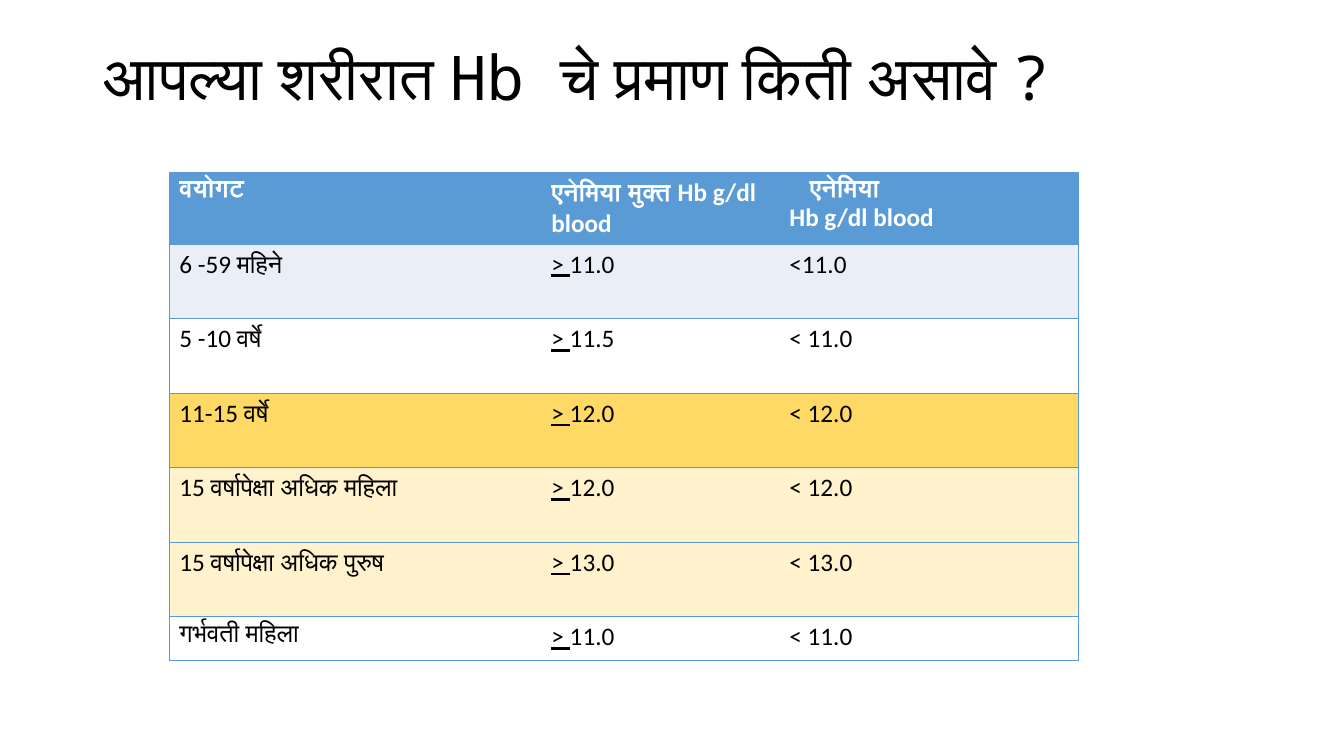
import pptx
import pptx.dml.color
import pptx.enum.text
import pptx.oxml
import pptx.oxml.ns
import pptx.util
from pptx.util import Inches

TITLE = "आपल्या शरीरात Hb चे प्रमाण किती असावे ?"
HEADINGS = ["वयोगट", "एनेमिया मुक्त Hb g/dl blood", "एनेमिया\nHb g/dl blood"]
AGE_GROUPS = [  # age group, anaemia-free level, anaemia level, row colour
    ("6 -59 महिने", "11.0", "<11.0", "pale_blue"),
    ("5 -10 वर्षे", "11.5", "< 11.0", "white"),
    ("11-15 वर्षे", "12.0", "< 12.0", "gold"),
    ("15 वर्षापेक्षा अधिक महिला", "12.0", "< 12.0", "cream"),
    ("15 वर्षापेक्षा अधिक पुरुष", "13.0", "< 13.0", "cream"),
    ("गर्भवती महिला", "11.0", "< 11.0", "white"),
]
COLORS = {
    "blue": "5B9BD5", "pale_blue": "EAEFF7", "white": "FFFFFF",
    "gold": "FFD966", "cream": "FFF2CC", "black": "000000",
}
COLUMN_WIDTHS = [3.69, 2.36, 2.97]
ROW_HEIGHTS = [0.58] + [0.74] * 5 + [0.43]
TITLE_FORMAT = {"name": "Noto Sans Mono", "size": pptx.util.Pt(44), "bold": False}
HEADING_FORMAT = {"name": "Calibri", "size": pptx.util.Pt(18), "bold": True}
BODY_FORMAT = HEADING_FORMAT | {"bold": False}


def rgb(color):
    return pptx.dml.color.RGBColor.from_string(COLORS[color])


def add_run(paragraph, text, font_format, color):
    run = paragraph.add_run()
    run.text = text
    for attribute, value in font_format.items():
        setattr(run.font, attribute, value)
    run.font.color.rgb = rgb(color)


def add_borders(cell, column):
    """Rule every row, and only the outer sides of the table."""
    drawn = {"lnL": column == 0, "lnR": column == len(HEADINGS) - 1, "lnT": True, "lnB": True}
    properties = cell._tc.get_or_add_tcPr()
    for position, (side, visible) in enumerate(drawn.items()):
        paint = (f'<a:solidFill><a:srgbClr val="{COLORS["blue"]}"/></a:solidFill>'
                 if visible else "<a:noFill/>")
        border = pptx.oxml.parse_xml(
            f'<a:{side} {pptx.oxml.ns.nsdecls("a")} w="12700">{paint}</a:{side}>')
        properties.insert(position, border)


def add_title(slide):
    title = slide.shapes.title
    title.left, title.top, title.width, title.height = map(Inches, (0.92, 0.4, 11.5, 0.8))
    title.text_frame.vertical_anchor = pptx.enum.text.MSO_ANCHOR.MIDDLE
    paragraph = title.text_frame.paragraphs[0]
    paragraph.alignment = pptx.enum.text.PP_ALIGN.LEFT
    paragraph.line_spacing = 0.9
    add_run(paragraph, TITLE, TITLE_FORMAT, "black")


def add_level_table(slide):
    table = slide.shapes.add_table(
        len(ROW_HEIGHTS), len(COLUMN_WIDTHS), Inches(1.68), Inches(1.71),
        Inches(sum(COLUMN_WIDTHS)), Inches(sum(ROW_HEIGHTS))).table
    table.horz_banding = False
    for column, width in zip(table.columns, COLUMN_WIDTHS):
        column.width = Inches(width)
    for row, height in zip(table.rows, ROW_HEIGHTS):
        row.height = Inches(height)

    rows = [(*HEADINGS, "blue"), *AGE_GROUPS]
    for row_number, (*texts, row_color) in enumerate(rows):
        is_heading = row_number == 0
        font_format = HEADING_FORMAT if is_heading else BODY_FORMAT
        text_color = "white" if is_heading else "black"
        for column, text in enumerate(texts):
            cell = table.cell(row_number, column)
            cell.fill.solid()
            cell.fill.fore_color.rgb = rgb(row_color)
            add_borders(cell, column)
            for line_number, line in enumerate(text.split("\n")):
                frame = cell.text_frame
                paragraph = frame.add_paragraph() if line_number else frame.paragraphs[0]
                if column == 1 and not is_heading:
                    add_run(paragraph, "> ", font_format | {"underline": True}, text_color)
                add_run(paragraph, line, font_format, text_color)

    anaemia_heading = table.cell(0, 2).text_frame.paragraphs[0]
    anaemia_heading._p.get_or_add_pPr().set("indent", str(Inches(0.2)))


def main():
    presentation = pptx.Presentation()
    presentation.slide_width = Inches(13.33)
    presentation.slide_height = Inches(7.5)
    slide = presentation.slides.add_slide(presentation.slide_layouts[5])
    add_title(slide)
    add_level_table(slide)
    presentation.save("out.pptx")


if __name__ == "__main__":
    main()
